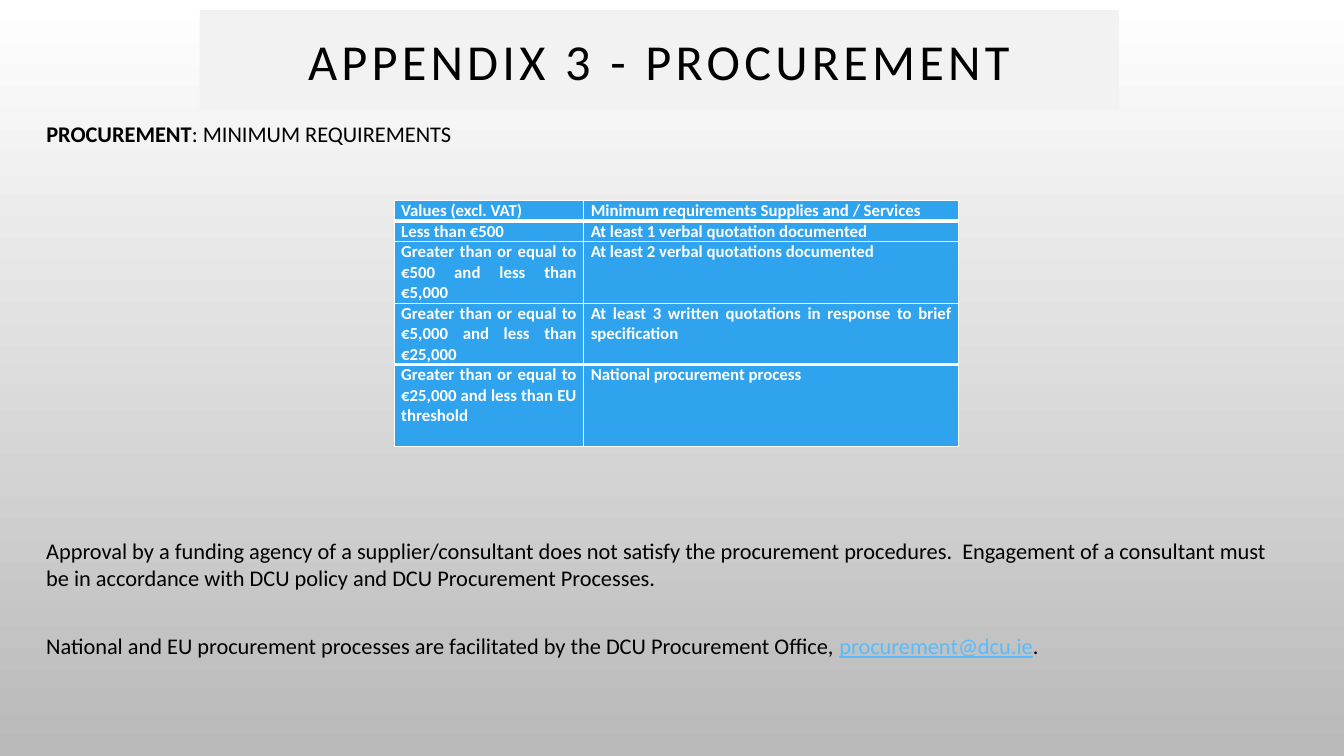
import pptx
import pptx.util
import pptx.dml.color
import pptx.enum.text
import pptx.oxml
import pptx.oxml.ns

Inches = pptx.util.Inches
Pt = pptx.util.Pt
Align = pptx.enum.text.PP_ALIGN
Anchor = pptx.enum.text.MSO_ANCHOR
Fit = pptx.enum.text.MSO_AUTO_SIZE


def color(code):
    return pptx.dml.color.RGBColor.from_string(code)


def node(text):
    return pptx.oxml.parse_xml(text.replace(">", f" {pptx.oxml.ns.nsdecls('a')}>", 1))


class Slide:
    face = "Calibri"
    ink = "000000"
    paper = "FFFFFF"
    blue = "2FA3EE"
    link = "56BCFE"
    panel = "F2F2F2"
    shade = "B9B9B9"

    def __init__(self, deck):
        self.page = deck.slides.add_slide(deck.slide_layouts[1])
        fill = self.page.background.fill
        fill.gradient()
        fill.gradient_angle = 270
        for stop, code in zip(fill.gradient_stops, (self.paper, self.shade)):
            stop.color.rgb = color(code)

    def place(self, shape, box):
        shape.left, shape.top, shape.width, shape.height = map(Inches, box)

    def run(self, para, text, size=16, code=ink, bold=False, line=False):
        run = para.add_run()
        run.text = text
        font = run.font
        font.name, font.size, font.bold = self.face, Pt(size), bold
        font.underline = line
        font.color.rgb = color(code)
        return run

    def title(self, box, text):
        shape = self.page.shapes.title
        self.place(shape, box)
        shape.fill.solid()
        shape.fill.fore_color.rgb = color(self.panel)
        frame = shape.text_frame
        frame.auto_size = Fit.NONE
        frame.vertical_anchor = Anchor.MIDDLE
        para = frame.paragraphs[0]
        para.alignment = Align.CENTER
        run = self.run(para, text, 36)
        run.font._element.set("spc", "300")

    def body(self, box, label, text):
        shape = self.page.placeholders[1]
        self.place(shape, box)
        frame = shape.text_frame
        frame.auto_size = Fit.NONE
        para = frame.paragraphs[0]
        props = para._p.get_or_add_pPr()
        props.set("marL", "0")
        props.set("indent", "0")
        props.append(node("<a:buNone></a:buNone>"))
        para.line_spacing = 1.2
        para.space_before = Pt(0)
        self.run(para, label, bold=True)
        self.run(para, text)

    def note(self, box, *parts):
        frame = self.page.shapes.add_textbox(*map(Inches, box)).text_frame
        frame.word_wrap = True
        para = frame.paragraphs[0]
        for text, style in parts:
            self.run(para, text, **style)

    def border(self, cell, widths):
        props = cell._tc.get_or_add_tcPr()
        for spot, (side, width) in enumerate(zip("LRTB", widths)):
            props.insert(spot, node(
                f'<a:ln{side} w="{Pt(width)}"><a:solidFill>'
                f'<a:srgbClr val="{self.paper}"/></a:solidFill></a:ln{side}>'))

    def table(self, box, cols, highs, rows):
        shape = self.page.shapes.add_table(len(rows), len(cols), *map(Inches, box))
        table = shape.table
        table.horz_banding = False
        for col, width in zip(table.columns, cols):
            col.width = Inches(width)
        last = len(rows) - 1
        for spot, texts in enumerate(rows):
            table.rows[spot].height = Inches(highs[spot])
            above = 3 if spot in (1, last) else 1
            below = 3 if spot in (0, last - 1) else 1
            for cell, text in zip(table.rows[spot].cells, texts):
                cell.margin_left = cell.margin_right = Inches(0.07)
                cell.margin_top = cell.margin_bottom = 0
                cell.fill.solid()
                cell.fill.fore_color.rgb = color(self.blue)
                self.border(cell, (1, 1, above, below))
                para = cell.text_frame.paragraphs[0]
                para.alignment = Align.JUSTIFY
                self.run(para, text, 12, self.paper, True)


def main():
    deck = pptx.Presentation()
    deck.slide_width, deck.slide_height = Inches(13.33), Inches(7.5)
    slide = Slide(deck)
    slide.body((0.36, 1.09, 11.73, 5.66), "PROCUREMENT", ": MINIMUM REQUIREMENTS")
    slide.title((1.98, 0.1, 9.12, 0.99), "APPENDIX 3 - PROCUREMENT")
    slide.table((3.91, 1.99, 5.6, 2.43), (1.88, 3.72), (0.2, 0.2, 0.61, 0.61, 0.81), (
        ("Values (excl. VAT)", "Minimum requirements Supplies and / Services"),
        ("Less than €500", "At least 1 verbal quotation documented"),
        ("Greater than or equal to €500 and less than €5,000",
         "At least 2 verbal quotations documented"),
        ("Greater than or equal to €5,000 and less than €25,000",
         "At least 3 written quotations in response to brief specification"),
        ("Greater than or equal to €25,000 and less than EU threshold",
         "National procurement process"),
    ))
    slide.note((0.36, 5.28, 12.56, 0.64), (
        "Approval by a funding agency of a supplier/consultant does not satisfy the "
        "procurement procedures.  Engagement of a consultant must be in accordance "
        "with DCU policy and DCU Procurement Processes.", {}))
    slide.note(
        (0.36, 6.22, 12.21, 0.67),
        ("National and EU procurement processes are facilitated by the "
         "DCU Procurement Office, ", {}),
        ("procurement@dcu.ie", {"code": slide.link, "line": True}),
        (".", {}))
    deck.save("out.pptx")


if __name__ == "__main__":
    main()
